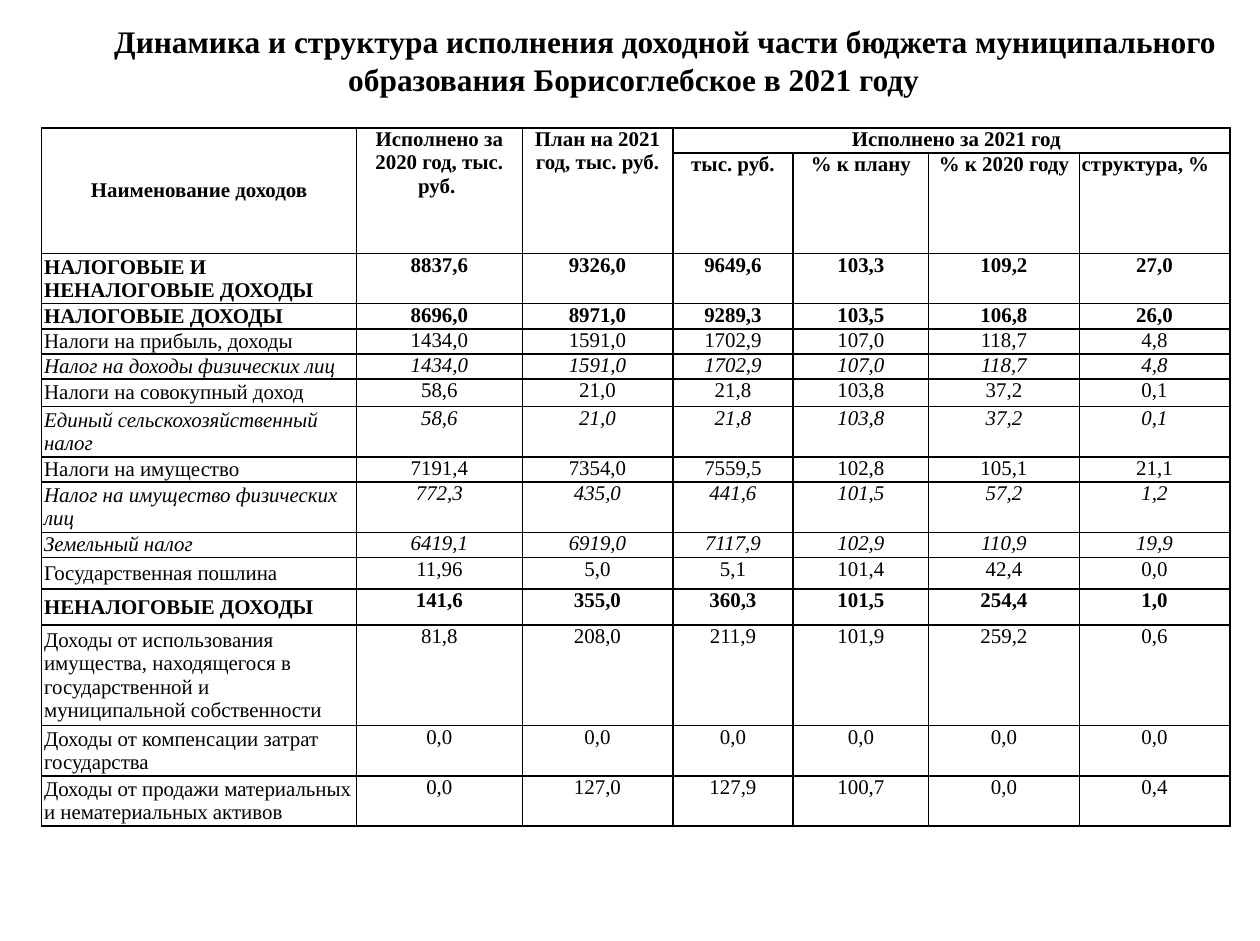
from pptx import Presentation
from pptx import util as u
from pptx.dml.color import RGBColor
from pptx.enum import text
from pptx.oxml import parse_xml
from pptx.oxml.ns import nsdecls

BLACK = RGBColor(0, 0, 0)
FONT = "Times New Roman"
MID = text.PP_ALIGN.CENTER
LEFT = text.PP_ALIGN.LEFT

TITLE = ("Динамика и структура исполнения доходной части бюджета "
         "муниципального образования Борисоглебское в 2021 году")
COLS = [0.25, 0.1315, 0.1195, 0.0956, 0.1076, 0.1195, 0.1195]
LINES = [1, 4, 2, 1, 1, 1, 1.1, 2, 1, 2, 1, 1.25, 1.45, 4, 2, 2]
HEAD = [
    ["Наименование доходов", "Исполнено за 2020 год, тыс. руб. ",
     "План на 2021 год, тыс. руб.", "Исполнено за 2021 год", "", "", ""],
    ["", "", "", "тыс. руб.", "% к плану", "% к 2020 году", "структура, %"],
]
SPANS = [((0, c), (1, c)) for c in range(3)] + [((0, 3), (0, 6))]
ROWS = [
    ("b", "НАЛОГОВЫЕ И НЕНАЛОГОВЫЕ ДОХОДЫ", "8837,6 9326,0 9649,6 103,3 109,2 27,0"),
    ("b", "НАЛОГОВЫЕ ДОХОДЫ", "8696,0 8971,0 9289,3 103,5 106,8 26,0"),
    ("", "Налоги на прибыль, доходы", "1434,0 1591,0 1702,9 107,0 118,7 4,8"),
    ("i", "Налог на доходы физических лиц", "1434,0 1591,0 1702,9 107,0 118,7 4,8"),
    ("", "Налоги на совокупный доход", "58,6 21,0 21,8 103,8 37,2 0,1"),
    ("i", "Единый сельскохозяйственный налог", "58,6 21,0 21,8 103,8 37,2 0,1"),
    ("", "Налоги на имущество", "7191,4 7354,0 7559,5 102,8 105,1 21,1"),
    ("i", "Налог на имущество физических лиц", "772,3 435,0 441,6 101,5 57,2 1,2"),
    ("i", "Земельный налог", "6419,1 6919,0 7117,9 102,9 110,9 19,9"),
    ("", "Государственная пошлина", "11,96 5,0 5,1 101,4 42,4 0,0"),
    ("b", "НЕНАЛОГОВЫЕ ДОХОДЫ", "141,6 355,0 360,3 101,5 254,4 1,0"),
    ("", "Доходы от использования имущества, находящегося в государственной и "
         "муниципальной собственности", "81,8 208,0 211,9 101,9 259,2 0,6"),
    ("", "Доходы от компенсации затрат государства", "0,0 0,0 0,0 0,0 0,0 0,0"),
    ("", "Доходы от продажи материальных и нематериальных активов",
     "0,0 127,0 127,9 100,7 0,0 0,4"),
]


class Deck:
    """Holds the style and the current slide and draws its title and table."""

    def __init__(self, wide, high):
        self.prs = Presentation()
        self.prs.slide_width = self.wide = u.Inches(wide)
        self.prs.slide_height = self.high = u.Inches(high)
        self.line = self.high / 37.5
        self.slide = self.prs.slides.add_slide(self.prs.slide_layouts[6])

    def x(self, share):
        return round(self.wide * share)

    def y(self, share):
        return round(self.high * share)

    def label(self, para, words, size, align, mark="", dent=0):
        para.text = words
        para.alignment = align
        if dent:
            para._p.get_or_add_pPr().set("indent", str(self.x(dent)))
        font = para.font
        font.name, font.size = FONT, u.Pt(size)
        font.bold, font.italic = mark == "b", mark == "i"
        font.color.rgb = BLACK

    def title(self, words, left, top, wide, high):
        box = self.slide.shapes.add_textbox(
            self.x(left), self.y(top), self.x(wide), self.y(high))
        frame = box.text_frame
        frame.word_wrap = True
        frame.auto_size = text.MSO_AUTO_SIZE.SHAPE_TO_FIT_TEXT
        self.label(frame.paragraphs[0], words, 18, MID, "b", 0.05)

    def cell(self, cell, words, align, mark, dent=0):
        cell.margin_left = cell.margin_right = u.Inches(0.02)
        cell.margin_top = cell.margin_bottom = 0
        self.label(cell.text_frame.paragraphs[0], words, 12, align, mark, dent)
        props = cell._tc.get_or_add_tcPr()
        for side in "LRTB":
            props.append(parse_xml(
                f'<a:ln{side} {nsdecls("a")} w="{u.Pt(1)}"><a:solidFill>'
                f'<a:srgbClr val="{BLACK}"/></a:solidFill></a:ln{side}>'))
        cell.fill.background()

    def table(self, rows, left, top):
        grid = self.slide.shapes.add_table(
            len(rows), len(COLS), self.x(left), self.y(top),
            self.x(sum(COLS)), round(self.line * sum(LINES))).table
        grid.first_row = grid.horz_banding = False
        for col, share in zip(grid.columns, COLS):
            col.width = self.x(share)
        for row, count in zip(grid.rows, LINES):
            row.height = round(self.line * count)
        for r, (mark, *words) in enumerate(rows):
            for c, word in enumerate(words):
                side = (c == 0 and r > 1) or (r, c) == (1, 6)
                dent = 0.008 if (r, c) == (0, 3) else 0
                self.cell(grid.cell(r, c), word, LEFT if side else MID, mark, dent)
            grid.cell(r, 0).vertical_anchor = text.MSO_ANCHOR.MIDDLE
        for start, end in SPANS:
            grid.cell(*start).merge(grid.cell(*end))


def main():
    deck = Deck(10.04, 7.5)
    deck.title(TITLE, 0.006, 0.017, 0.994, 0.095)
    rows = [("b", *words) for words in HEAD]
    rows += [(mark, name, *sums.split()) for mark, name, sums in ROWS]
    deck.table(rows, 0.033, 0.136)
    deck.prs.save("out.pptx")


if __name__ == "__main__":
    main()
